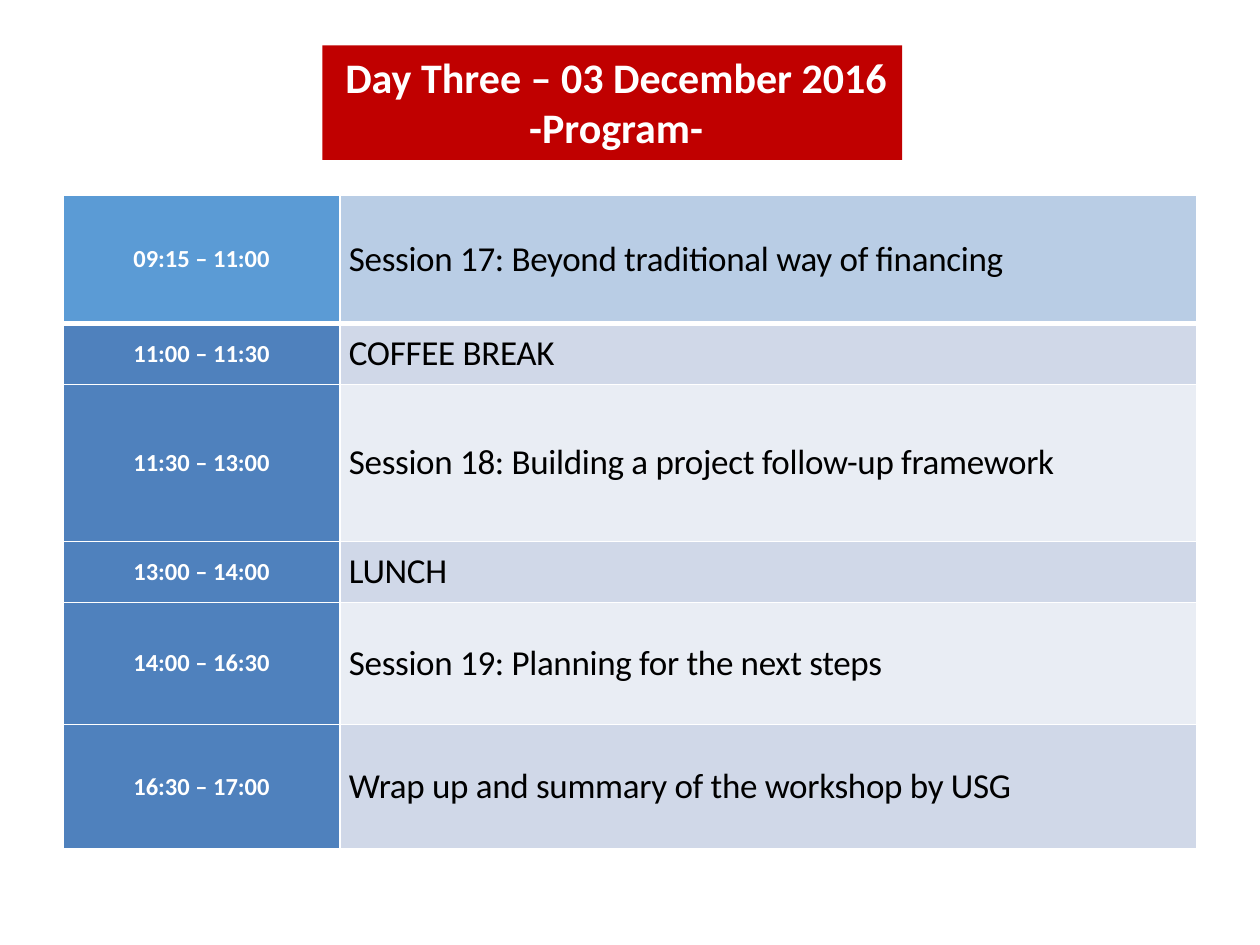
import lxml.etree
import pptx
import pptx.dml.color
import pptx.enum.shapes
import pptx.enum.text
import pptx.oxml.ns
import pptx.util

Pt = pptx.util.Pt
RGBColor = pptx.dml.color.RGBColor
Align = pptx.enum.text.PP_ALIGN
Anchor = pptx.enum.text.MSO_ANCHOR
qn = pptx.oxml.ns.qn

WHITE = RGBColor(0xFF, 0xFF, 0xFF)
BLACK = RGBColor(0x00, 0x00, 0x00)
RED = RGBColor(0xC0, 0x00, 0x00)
FIRST_TIME = RGBColor(0x5B, 0x9B, 0xD5)
FIRST_SESSION = RGBColor(0xB9, 0xCD, 0xE5)
TIME = RGBColor(0x4F, 0x81, 0xBD)
BANDS = (RGBColor(0xE9, 0xED, 0xF4), RGBColor(0xD0, 0xD8, 0xE8))

PROGRAM = [
    ("09:15 – 11:00", "Session 17: Beyond traditional way of financing", 73.4),
    ("11:00 – 11:30", "COFFEE BREAK", 34.6),
    ("11:30 – 13:00", "Session 18: Building a project follow-up framework", 90),
    ("13:00 – 14:00", "LUNCH", 34.6),
    ("14:00 – 16:30", "Session 19: Planning for the next steps", 69.8),
    ("16:30 – 17:00", "Wrap up and summary of the workshop by USG", 71.3),
]
COLUMN_WIDTHS = (158.4, 489.6)


class ProgramSlide:
    font_name = "Calibri"

    def __init__(self, presentation):
        self.slide = presentation.slides.add_slide(presentation.slide_layouts[6])

    def style(self, paragraph, size, color, bold, alignment):
        paragraph.alignment = alignment
        font = paragraph.font
        font.name, font.size, font.bold = self.font_name, Pt(size), bold
        font.color.rgb = color

    def banner(self, lines, left, top, width, height):
        shape = self.slide.shapes.add_shape(
            pptx.enum.shapes.MSO_SHAPE.RECTANGLE,
            Pt(left), Pt(top), Pt(width), Pt(height))
        shape.shadow.inherit = False
        shape.fill.solid()
        shape.fill.fore_color.rgb = RED
        shape.line.fill.background()
        frame = shape.text_frame
        frame.word_wrap = False
        frame.auto_size = pptx.enum.text.MSO_AUTO_SIZE.SHAPE_TO_FIT_TEXT
        frame.vertical_anchor = Anchor.TOP
        frame.text = "\n".join(lines)
        for paragraph in frame.paragraphs:
            self.style(paragraph, 24, WHITE, True, Align.CENTER)
            paragraph_properties = paragraph._p.get_or_add_pPr()
            paragraph_properties.set("marL", str(Pt(4.3)))
            paragraph_properties.set("indent", "0")

    def borders(self, cell, bottom, top):
        properties = cell._tc.get_or_add_tcPr()
        widths = {"a:lnL": 1, "a:lnR": 1, "a:lnT": top, "a:lnB": bottom}
        for position, (tag, width) in enumerate(widths.items()):
            line = lxml.etree.Element(qn(tag), w=str(Pt(width)))
            fill = lxml.etree.SubElement(line, qn("a:solidFill"))
            lxml.etree.SubElement(fill, qn("a:srgbClr"), val=str(WHITE))
            properties.insert(position, line)

    def cell(self, cell, text, fill):
        cell.fill.solid()
        cell.fill.fore_color.rgb = fill
        cell.vertical_anchor = Anchor.MIDDLE
        cell.margin_left = cell.margin_right = Pt(5)
        cell.margin_top = cell.margin_bottom = 0
        cell.text = text
        return cell.text_frame.paragraphs[0]

    def program(self, entries, left, top):
        heights = [height for _, _, height in entries]
        table = self.slide.shapes.add_table(
            len(entries), len(COLUMN_WIDTHS), Pt(left), Pt(top),
            Pt(sum(COLUMN_WIDTHS)), Pt(sum(heights))).table
        for column, width in zip(table.columns, COLUMN_WIDTHS):
            column.width = Pt(width)
        for index, (time, session, height) in enumerate(entries):
            table.rows[index].height = Pt(height)
            time_cell, session_cell = table.rows[index].cells
            first = index == 0
            paragraph = self.cell(time_cell, time, FIRST_TIME if first else TIME)
            self.style(paragraph, 14, WHITE, True, Align.CENTER)
            band = FIRST_SESSION if first else BANDS[index % 2]
            paragraph = self.cell(session_cell, session, band)
            self.style(paragraph, 20, BLACK, False, Align.LEFT)
            paragraph.runs[0].font._element.set("spc", "-20")
            for cell in (time_cell, session_cell):
                self.borders(cell, bottom=3 if first else 1, top=3 if index == 1 else 1)


def main():
    presentation = pptx.Presentation()
    presentation.slide_width, presentation.slide_height = Pt(720), Pt(540)
    slide = ProgramSlide(presentation)
    slide.program(PROGRAM, 36, 111.6)
    slide.banner(["Day Three – 03 December 2016", "-Program-"], 184.3, 25.9, 331.2, 65.5)
    presentation.save("out.pptx")


if __name__ == "__main__":
    main()
